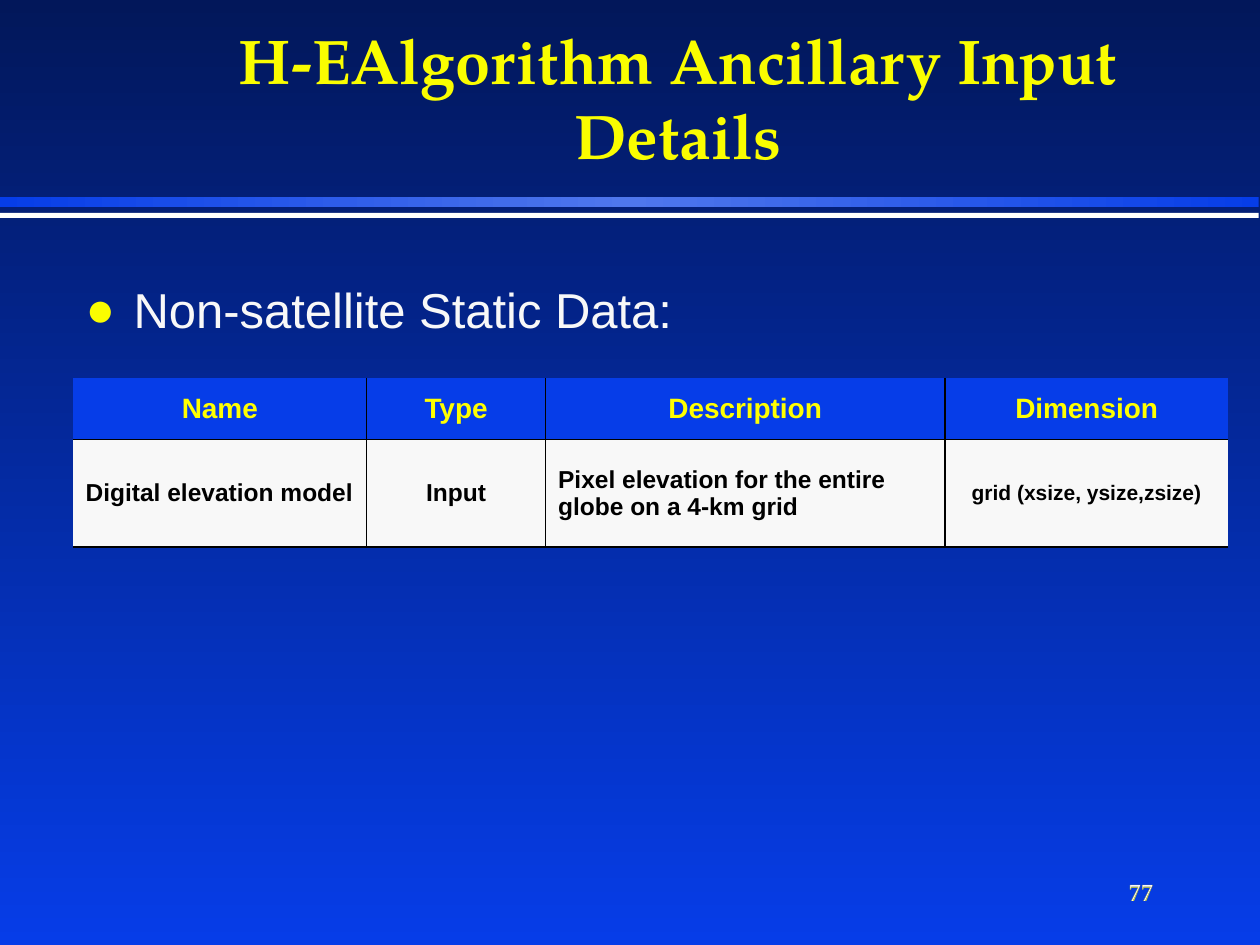
from copy import deepcopy
from typing import Any, NamedTuple

from lxml import etree
from pptx import Presentation
from pptx.dml.color import RGBColor
from pptx.enum import shapes, text
from pptx.oxml import ns
from pptx.util import Inches, Pt

NAVY = RGBColor(0x02, 0x17, 0x5A)
BLUE = RGBColor(0x06, 0x3D, 0xE8)
LIGHT_BLUE = RGBColor(0x4F, 0x77, 0xEC)
WHITE = RGBColor(0xFF, 0xFF, 0xFF)
OFF_WHITE = RGBColor(0xF8, 0xF8, 0xF8)
GOLD = RGBColor(0xFA, 0xFD, 0x00)
YELLOW = RGBColor(0xFF, 0xFF, 0x00)
BLACK = RGBColor(0, 0, 0)

LEFT, CENTER, RIGHT = text.PP_ALIGN.LEFT, text.PP_ALIGN.CENTER, text.PP_ALIGN.RIGHT
TOP, MIDDLE, BOTTOM = text.MSO_ANCHOR.TOP, text.MSO_ANCHOR.MIDDLE, text.MSO_ANCHOR.BOTTOM


class Box(NamedTuple):
    left: float
    top: float
    width: float
    height: float


class Style(NamedTuple):
    name: str
    size: float
    color: RGBColor
    bold: bool = False
    align: Any = LEFT


class Cell(NamedTuple):
    text: str
    style: Style
    fill: RGBColor


HEADER = Style("Arial", 16, YELLOW, True, CENTER)
ENTRY = Style("Arial", 14, BLACK, True)
CENTERED = ENTRY._replace(align=CENTER)
SMALL = CENTERED._replace(size=12)

COLUMNS = (2.33, 1.42, 3.17, 2.25)
ROWS = (0.49, 0.85)
CELLS = (
    [Cell(t, HEADER, BLUE) for t in ("Name", "Type", "Description", "Dimension")],
    [
        Cell("Digital elevation model", ENTRY, OFF_WHITE),
        Cell("Input", CENTERED, OFF_WHITE),
        Cell("Pixel elevation for the entire globe on a 4-km grid", ENTRY, OFF_WHITE),
        Cell("grid (xsize, ysize,zsize)", SMALL, OFF_WHITE),
    ],
)


def set_attrs(obj: Any, values: dict[str, Any]) -> None:
    for key, value in values.items():
        setattr(obj, key, value)


def place(sp: Any, box: Box) -> None:
    set_attrs(sp, {k: Inches(v) for k, v in box._asdict().items()})


def write(tf: Any, content: str, style: Style) -> None:
    p = tf.paragraphs[0]
    p.alignment = style.align
    r = p.add_run()
    r.text = content
    set_attrs(r.font, {"name": style.name, "size": Pt(style.size), "bold": style.bold})
    r.font.color.rgb = style.color


def fill_frame(sp: Any, box: Box, content: str, style: Style, anchor: Any) -> None:
    place(sp, box)
    set_attrs(sp.text_frame, {
        "word_wrap": True,
        "auto_size": text.MSO_AUTO_SIZE.NONE,
        "vertical_anchor": anchor,
    })
    write(sp.text_frame, content, style)


def add_bullet(p: Any, char: str, color: RGBColor, indent: float) -> None:
    pPr = p._p.get_or_add_pPr()
    pPr.set("marL", str(Inches(indent)))
    pPr.set("indent", str(-Inches(indent)))
    clr = etree.SubElement(pPr, ns.qn("a:buClr"))
    etree.SubElement(clr, ns.qn("a:srgbClr"), val=str(color))
    etree.SubElement(pPr, ns.qn("a:buFont"), typeface="Arial")
    etree.SubElement(pPr, ns.qn("a:buChar"), char=char)


def set_gradient(fill: Any, start: RGBColor, end: RGBColor, angle: float) -> None:
    fill.gradient()
    fill.gradient_angle = angle
    for stop, color, position in zip(fill.gradient_stops, (start, end), (0, 1)):
        stop.color.rgb = color
        stop.position = position


def add_bar(s: Any, box: Box) -> Any:
    sp = s.shapes.add_shape(shapes.MSO_SHAPE.RECTANGLE, *map(Inches, box))
    sp.shadow.inherit = False
    sp.line.fill.background()
    return sp


def add_glow_bar(s: Any, box: Box) -> None:
    sp = add_bar(s, box)
    set_gradient(sp.fill, BLUE, LIGHT_BLUE, 0)
    stops = sp._element.spPr.find(".//" + ns.qn("a:gsLst"))
    stops.append(deepcopy(stops[0]))
    stops[1].set("pos", "50000")
    stops[2].set("pos", "100000")


def add_border(tcPr: Any, side: str, visible: bool) -> None:
    ln = etree.SubElement(tcPr, ns.qn(f"a:ln{side}"), w=str(Pt(1)))
    if visible:
        solid = etree.SubElement(ln, ns.qn("a:solidFill"))
        etree.SubElement(solid, ns.qn("a:srgbClr"), val=str(BLACK))
    else:
        etree.SubElement(ln, ns.qn("a:noFill"))


def add_data_table(s: Any, left: float, top: float) -> None:
    box = Box(left, top, sum(COLUMNS), sum(ROWS))
    table = s.shapes.add_table(len(ROWS), len(COLUMNS), *map(Inches, box)).table
    for column, width in zip(table.columns, COLUMNS):
        column.width = Inches(width)
    for i, (height, cells) in enumerate(zip(ROWS, CELLS)):
        table.rows[i].height = Inches(height)
        for j, data in enumerate(cells):
            cell = table.cell(i, j)
            cell.vertical_anchor = MIDDLE
            tcPr = cell._tc.get_or_add_tcPr()
            borders = {"L": j > 0, "R": j < len(COLUMNS) - 1, "T": i > 0, "B": True}
            for side, visible in borders.items():
                add_border(tcPr, side, visible)
            cell.fill.solid()
            cell.fill.fore_color.rgb = data.fill
            write(cell.text_frame, data.text, data.style)


def main() -> None:
    prs = Presentation()
    set_attrs(prs, {"slide_width": Inches(10), "slide_height": Inches(7.5)})
    s = prs.slides.add_slide(prs.slide_layouts[1])
    set_gradient(s.background.fill, NAVY, BLUE, 270)

    add_glow_bar(s, Box(0, 1.56, 9.99, 0.08))
    rule = add_bar(s, Box(0, 1.69, 9.99, 0.04))
    rule.fill.solid()
    rule.fill.fore_color.rgb = WHITE

    number_box = Box(7.17, 6.83, 2.08, 0.5)
    for color, bold in ((YELLOW, True), (BLACK, False), (OFF_WHITE, False)):
        sp = s.shapes.add_textbox(0, 0, 0, 0)
        style = Style("Times New Roman", 14, color, bold, RIGHT)
        fill_frame(sp, number_box, "77", style, MIDDLE)

    body = s.placeholders[1]
    add_bullet(body.text_frame.paragraphs[0], "●", GOLD, 0.38)
    fill_frame(body, Box(0.58, 2.17, 6.75, 0.92), "Non-satellite Static Data:",
               Style("Arial", 28, OFF_WHITE), TOP)
    fill_frame(s.shapes.title, Box(1.42, 0.17, 7.92, 1.25),
               "H-EAlgorithm Ancillary Input Details",
               Style("TeX Gyre Pagella", 36, GOLD, True, CENTER), BOTTOM)
    add_data_table(s, 0.58, 3)
    prs.save("out.pptx")


if __name__ == "__main__":
    main()
